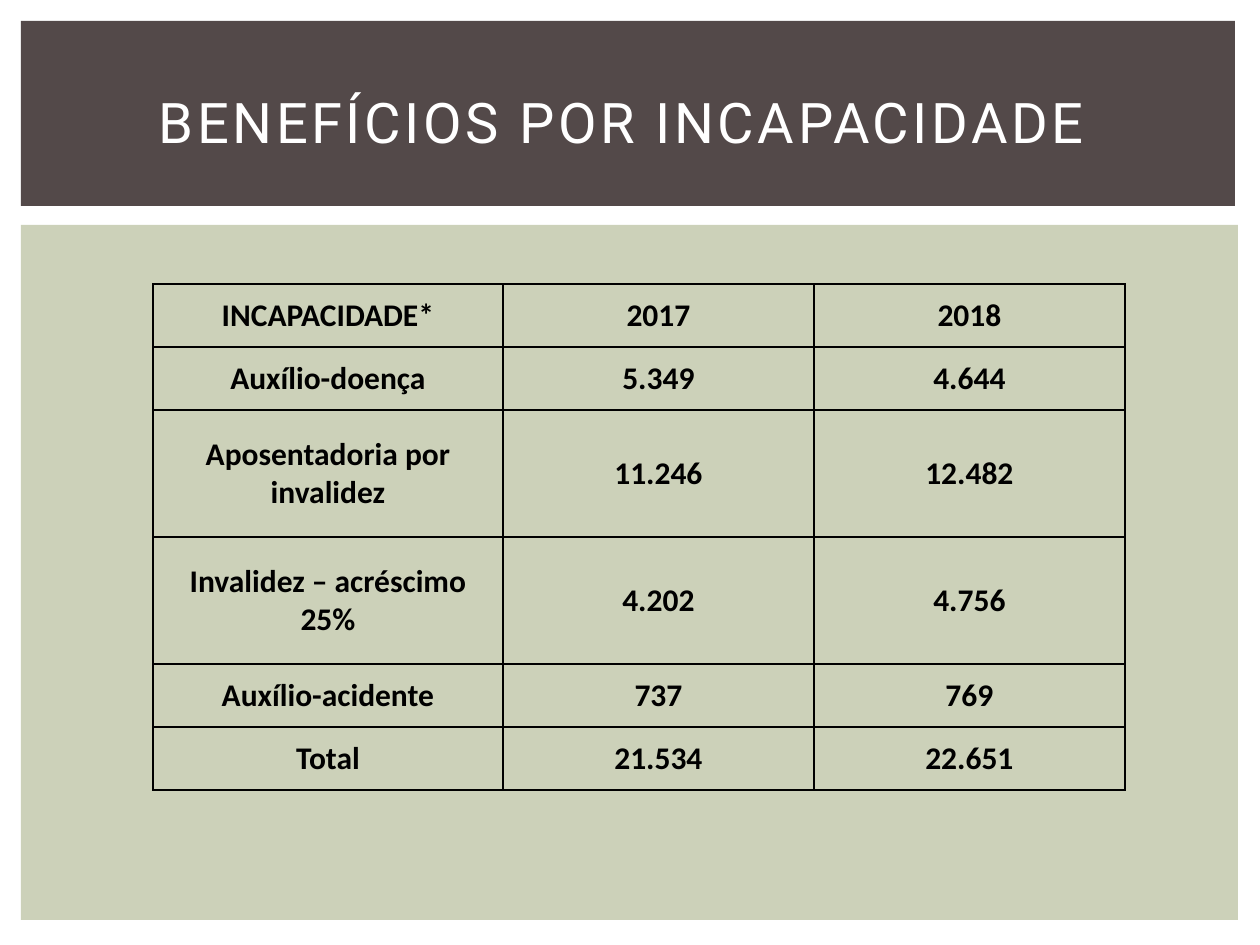
import pptx
import pptx.dml.color
import pptx.enum.shapes
import pptx.enum.text
import pptx.oxml
import pptx.oxml.ns
import pptx.util

PX = 914400 / 126
CENTER = pptx.enum.text.PP_ALIGN.CENTER
MIDDLE = pptx.enum.text.MSO_ANCHOR.MIDDLE


def emu(px):
    return pptx.util.Emu(round(px * PX))


def color(value):
    return pptx.dml.color.RGBColor.from_string(value)


class BenefitSlide:
    """Styled slide with panels, a heading and a bordered table."""

    INK = "000000"
    BODY_FONT = "Calibri"
    HEADING_FONT = "Roboto"

    def __init__(self, deck):
        self.slide = deck.slides.add_slide(deck.slide_layouts[6])

    def add_text(self, paragraph, text, font, size, ink, bold=False):
        paragraph.alignment = CENTER
        run = paragraph.add_run()
        run.text = text
        run.font.name = font
        run.font.size = pptx.util.Pt(size)
        run.font.bold = bold
        run.font.color.rgb = color(ink)
        return run

    def panel(self, box, fill):
        panel = self.slide.shapes.add_shape(
            pptx.enum.shapes.MSO_SHAPE.RECTANGLE, *map(emu, box))
        panel.shadow.inherit = False
        panel.fill.solid()
        panel.fill.fore_color.rgb = color(fill)
        panel.line.fill.background()

    def heading(self, box, text):
        frame = self.slide.shapes.add_textbox(*map(emu, box)).text_frame
        frame.word_wrap = True
        frame.vertical_anchor = MIDDLE
        run = self.add_text(frame.paragraphs[0], text, self.HEADING_FONT, 32, "FFFFFF")
        run._r.get_or_add_rPr().set("spc", "200")

    def border(self, cell):
        properties = cell._tc.get_or_add_tcPr()
        for position, side in enumerate(("lnL", "lnR", "lnT", "lnB")):
            properties.insert(position, pptx.oxml.parse_xml(
                f'<a:{side} {pptx.oxml.ns.nsdecls("a")} w="12700"><a:solidFill>'
                f'<a:srgbClr val="{self.INK}"/></a:solidFill></a:{side}>'))

    def table(self, left, top, widths, heights, rows):
        table = self.slide.shapes.add_table(
            len(rows), len(widths), emu(left), emu(top),
            emu(sum(widths)), emu(sum(heights))).table
        table.first_row = table.horz_banding = False
        for column, width in zip(table.columns, widths):
            column.width = emu(width)
        for table_row, height, texts in zip(table.rows, heights, rows):
            table_row.height = emu(height)
            for cell, text in zip(table_row.cells, texts):
                cell.fill.background()
                cell.vertical_anchor = MIDDLE
                cell.margin_left = cell.margin_right = emu(9)
                cell.margin_top = cell.margin_bottom = 0
                self.border(cell)
                self.add_text(cell.text_frame.paragraphs[0], text,
                              self.BODY_FONT, 18, self.INK, True)


def main():
    deck = pptx.Presentation()
    deck.slide_width, deck.slide_height = emu(1260), emu(945)
    page = BenefitSlide(deck)
    page.panel((21, 225, 1217, 695), "CCD1B9")
    page.panel((21, 21, 1214, 185), "534949")
    page.table(153, 284, (350, 311, 311), (63, 63, 127, 127, 63, 63), (
        ("INCAPACIDADE*", "2017", "2018"),
        ("Auxílio-doença", "5.349", "4.644"),
        ("Aposentadoria por invalidez", "11.246", "12.482"),
        ("Invalidez – acréscimo 25%", "4.202", "4.756"),
        ("Auxílio-acidente", "737", "769"),
        ("Total", "21.534", "22.651"),
    ))
    page.heading((53, 49, 1155, 145), "BENEFÍCIOS POR INCAPACIDADE ")
    deck.save("out.pptx")


if __name__ == "__main__":
    main()
